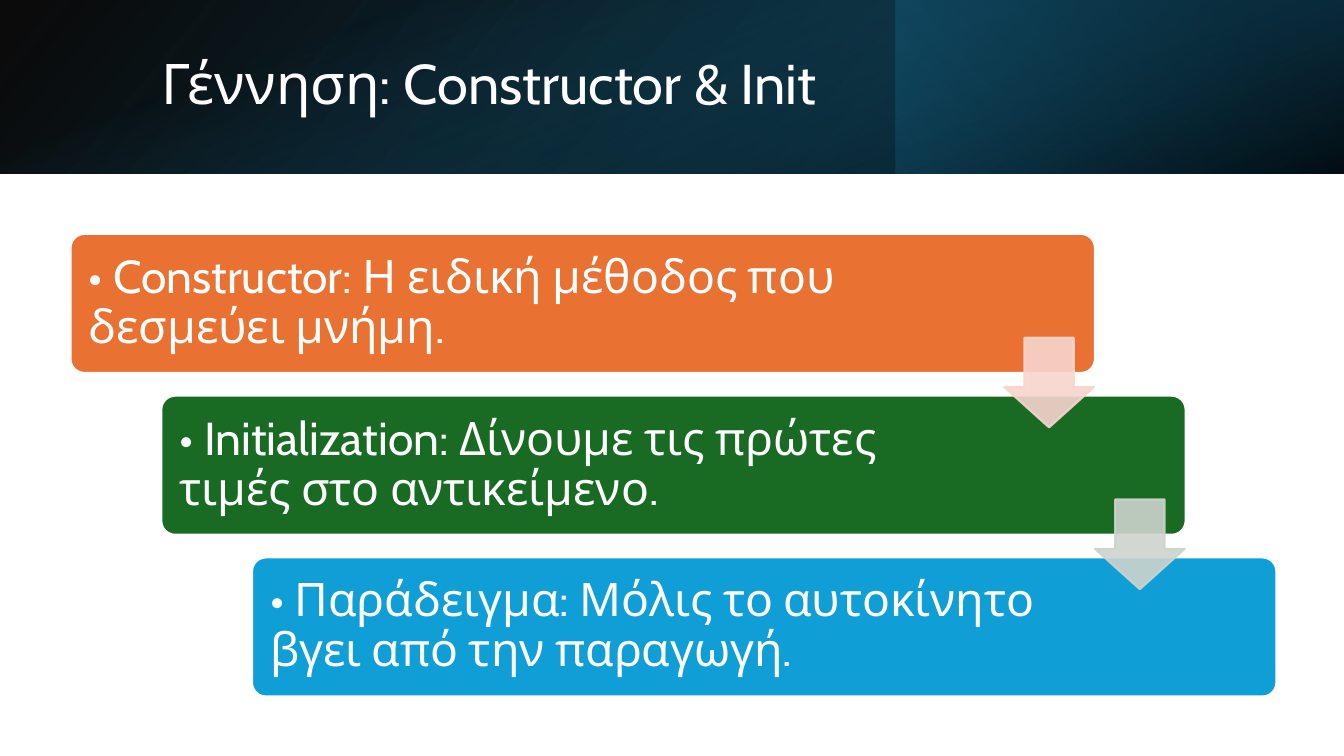
"""Build a slide with a gradient header and a three-step staircase."""
from pptx import Presentation
from pptx.dml.color import RGBColor
from pptx.enum.shapes import MSO_SHAPE as Shape
from pptx.enum.text import MSO_ANCHOR as Anchor, MSO_AUTO_SIZE as AutoSize, PP_ALIGN as Align
from pptx.oxml import parse_xml
from pptx.oxml.ns import nsdecls, qn
from pptx.oxml.xmlchemy import OxmlElement
from pptx.util import Inches, Pt

WIDTH, HEIGHT, HEADER = 13.33, 7.5, 1.72
FONT, WHITE = "Cabin", "FFFFFF"
TITLE = "Γέννηση: Constructor & Init"
STEPS = [
    ("• Constructor: Η ειδική μέθοδος που δεσμεύει μνήμη.", "E97132", 8.67),
    ("• Initialization: Δίνουμε τις πρώτες τιμές στο αντικείμενο.", "196B24", 8.29),
    ("• Παράδειγμα: Μόλις το αυτοκίνητο βγει από την παραγωγή.", "0F9ED5", 8.29),
]
ARROWS = ["F7D5CE", "CCD4CD"]
BANDS = [
    ((0, 0, WIDTH, HEADER), 0, True, 140, [(0, "000000", 96), (100, "104862", 100)]),
    ((WIDTH * 2 / 3, 0, WIDTH / 3, HEADER), 180, False, 320,
     [(19, "0B3041", 68), (100, "156082", 79)]),
    (((WIDTH - HEADER) / 2, (HEADER - WIDTH) / 2, HEADER, WIDTH), 90, False, 340,
     [(23, "156082", 0), (99, "000000", 74)]),
]
BAR_LEFT, BAR_TOP, BAR_WIDTH, BAR_HEIGHT = 0.7, 2.32, 10.16, 1.38
STEP_X, STEP_Y, INSET = 0.9, 1.605, 0.04
ARROW_LEFT, ARROW_TOP, ARROW_SIZE = 9.96, 3.35, 0.89


def rgb(code):
    return RGBColor.from_string(code)


def place(shapes, preset, box):
    part = shapes.add_shape(preset, *map(Inches, box))
    part.shadow.inherit = False
    return part


def paint(part, code, opacity=100):
    part.fill.solid()
    part.fill.fore_color.rgb = rgb(code)
    part.line.color.rgb = rgb(code if opacity < 100 else WHITE)
    part.line.width = Pt(1.5)
    if opacity < 100:
        for color in part._element.spPr.iter(qn("a:srgbClr")):
            alpha = OxmlElement("a:alpha")
            alpha.set("val", str(opacity * 1000))
            color.append(alpha)


def blend(part, angle, stops):
    part.line.fill.background()
    part.fill.background()
    marks = "".join(
        f'<a:gs pos="{pos * 1000}"><a:srgbClr val="{code}">'
        f'<a:alpha val="{opacity * 1000}"/></a:srgbClr></a:gs>'
        for pos, code, opacity in stops)
    gradient = parse_xml(
        f'<a:gradFill {nsdecls("a")} rotWithShape="1"><a:gsLst>{marks}</a:gsLst>'
        f'<a:lin ang="{angle * 60000}" scaled="0"/></a:gradFill>')
    properties = part._element.spPr
    properties.replace(properties.find(qn("a:noFill")), gradient)


def write(part, text, size):
    frame = part.text_frame
    frame.text = text
    frame.word_wrap = True
    frame.auto_size = AutoSize.NONE
    frame.vertical_anchor = Anchor.MIDDLE
    paragraph = frame.paragraphs[0]
    paragraph.alignment = Align.LEFT
    paragraph.line_spacing = 0.9
    font = paragraph.runs[0].font
    font.name, font.size, font.color.rgb = FONT, Pt(size), rgb(WHITE)
    return frame


def add_header(slide):
    for depth, (box, turn, mirrored, angle, stops) in enumerate(BANDS):
        band = place(slide.shapes, Shape.RECTANGLE, box)
        band.rotation = turn
        if mirrored:
            band._element.spPr.xfrm.set("flipH", "1")
        blend(band, angle, stops)
        slide.shapes._spTree.insert(2 + depth, band._element)
    title = slide.shapes.title
    title.left, title.top, title.width, title.height = map(Inches, (1.5, 0.38, 10.98, 0.96))
    write(title, TITLE, 40)


def add_staircase(slide):
    stairs = slide.shapes.add_group_shape().shapes
    for row, (text, code, text_width) in enumerate(STEPS):
        left, top = BAR_LEFT + row * STEP_X, BAR_TOP + row * STEP_Y
        bar = place(stairs, Shape.ROUNDED_RECTANGLE, (left, top, BAR_WIDTH, BAR_HEIGHT))
        bar.adjustments[0] = 0.1
        paint(bar, code)
        label = stairs.add_textbox(*map(Inches, (
            left + INSET, top + INSET, text_width, BAR_HEIGHT - 2 * INSET)))
        frame = write(label, text, 33)
        frame.margin_left = frame.margin_right = Inches(0.14)
        frame.margin_top = frame.margin_bottom = Inches(0.14)
    for row, code in enumerate(ARROWS):
        arrow = place(stairs, Shape.DOWN_ARROW, (
            ARROW_LEFT + row * STEP_X, ARROW_TOP + row * STEP_Y, ARROW_SIZE, ARROW_SIZE))
        arrow.adjustments[0], arrow.adjustments[1] = 0.55, 0.45
        paint(arrow, code, 90)


def main():
    deck = Presentation()
    deck.slide_width, deck.slide_height = Inches(WIDTH), Inches(HEIGHT)
    slide = deck.slides.add_slide(deck.slide_layouts[5])
    add_header(slide)
    add_staircase(slide)
    deck.save("out.pptx")


if __name__ == "__main__":
    main()
